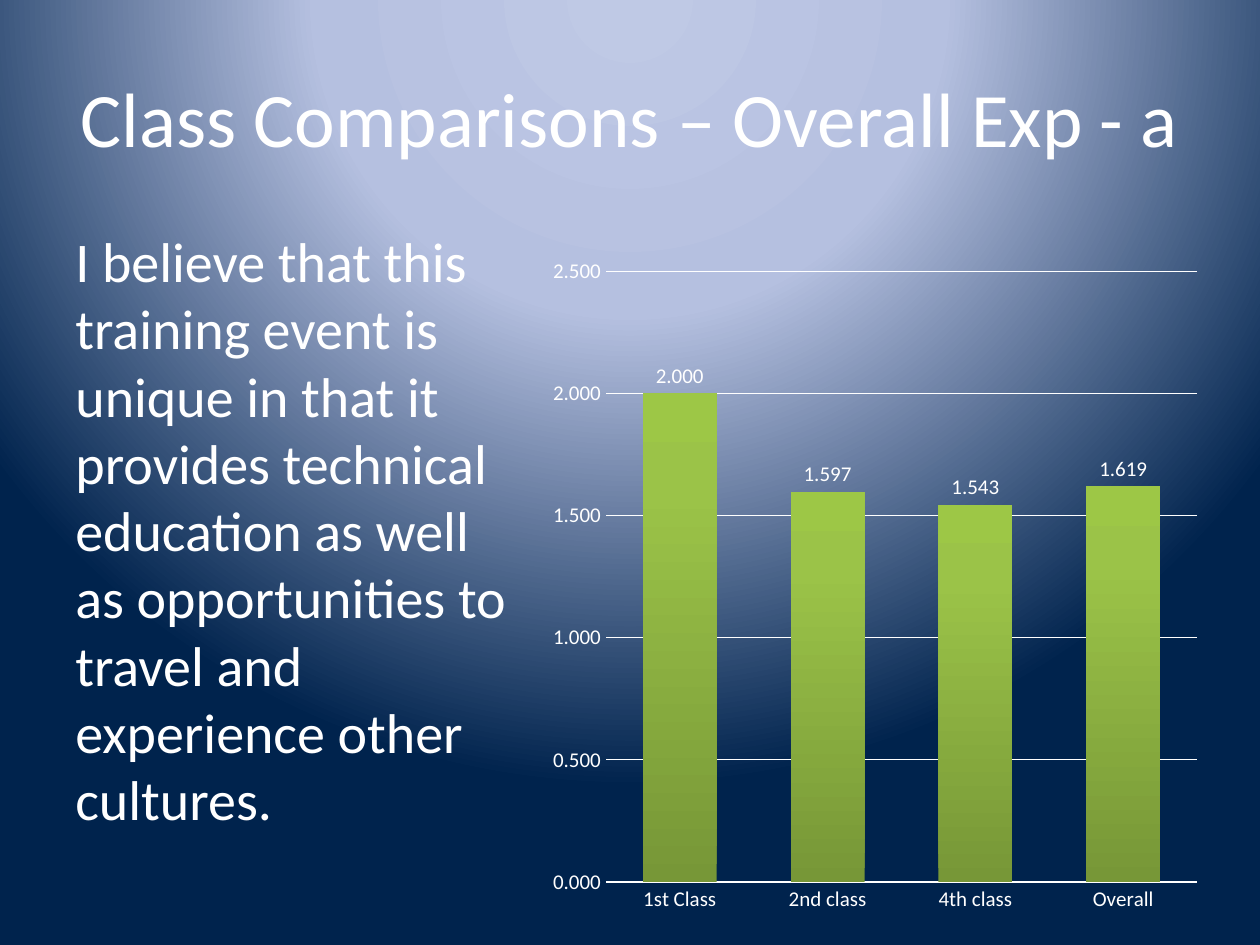
from lxml import etree
from pptx import Presentation
from pptx.chart.data import CategoryChartData
from pptx.dml.color import RGBColor
from pptx.enum import chart as charts, text
from pptx.oxml import parse_xml
from pptx.oxml.ns import nsdecls, qn
from pptx.util import Inches, Pt

FONT = "Calibri"
WHITE = "FFFFFF"
NUMBER_FORMAT = "0.000"


def color(hex_string):
    return RGBColor.from_string(hex_string)


def format_font(font, size, hex_color=WHITE):
    font.name = FONT
    font.size = Pt(size)
    font.color.rgb = color(hex_color)


def add_text(slide, content, left, top, width, height, *, size,
             align=text.PP_ALIGN.LEFT, anchor=text.MSO_ANCHOR.TOP):
    box = slide.shapes.add_textbox(
        Inches(left), Inches(top), Inches(width), Inches(height))
    frame = box.text_frame
    frame.word_wrap = True
    frame.vertical_anchor = anchor
    paragraph = frame.paragraphs[0]
    paragraph.alignment = align
    run = paragraph.add_run()
    run.text = content
    format_font(run.font, size)
    return box


def set_gradient(parent, stops, shading):
    """Replace the solid fill in parent with a gradient of (percent, color) stops."""
    stop_xml = "".join(
        f'<a:gs pos="{percent * 1000}"><a:srgbClr val="{hex_color}"/></a:gs>'
        for percent, hex_color in stops)
    gradient = parse_xml(
        f'<a:gradFill {nsdecls("a")} rotWithShape="1">'
        f'<a:gsLst>{stop_xml}</a:gsLst>{shading}</a:gradFill>')
    parent.replace(parent.find(qn("a:solidFill")), gradient)


def set_background(slide):
    slide.background.fill.solid()
    properties = slide._element.find(".//" + qn("p:bgPr"))
    set_gradient(
        properties, [(0, "BFC9E5"), (40, "B5C0E0"), (100, "00234D")],
        '<a:path path="circle">'
        '<a:fillToRect l="50000" t="-80000" r="50000" b="180000"/></a:path>')


def set_plot_layout(chart, **bounds):
    """Place the inner plot area by fractions of the chart's size."""
    area = chart._chartSpace.find(".//" + qn("c:plotArea"))
    for old_layout in area.findall(qn("c:layout")):
        area.remove(old_layout)
    layout = etree.Element(qn("c:layout"))
    manual = etree.SubElement(layout, qn("c:manualLayout"))
    settings = {"layoutTarget": "inner", "xMode": "edge", "yMode": "edge", **bounds}
    for name, value in settings.items():
        etree.SubElement(manual, qn(f"c:{name}")).set("val", str(value))
    area.insert(0, layout)


def format_axis(axis):
    axis.major_tick_mark = charts.XL_TICK_MARK.NONE
    axis.minor_tick_mark = charts.XL_TICK_MARK.NONE
    format_font(axis.tick_labels.font, 12)


def set_line(line, width):
    line.color.rgb = color(WHITE)
    line.width = Pt(width)


def add_column_chart(slide, categories, values, left, top, width, height):
    data = CategoryChartData(number_format=NUMBER_FORMAT)
    data.categories = categories
    data.add_series("Series 1", values)
    chart = slide.shapes.add_chart(
        charts.XL_CHART_TYPE.COLUMN_CLUSTERED,
        Inches(left), Inches(top), Inches(width), Inches(height), data).chart
    chart.has_legend = False
    chart.has_title = False
    format_font(chart.font, 10)
    set_plot_layout(chart, x=0.103, y=0.059, w=0.866, h=0.881)

    # Axes
    format_axis(chart.category_axis)
    set_line(chart.category_axis.format.line, 1)
    value_axis = chart.value_axis
    format_axis(value_axis)
    value_axis.minimum_scale = 0
    value_axis.maximum_scale = 2.5
    value_axis.major_unit = 0.5
    value_axis.format.line.fill.background()
    value_axis.has_major_gridlines = True
    set_line(value_axis.major_gridlines.format.line, 0.75)
    value_axis.tick_labels.number_format = NUMBER_FORMAT
    value_axis.tick_labels.number_format_is_linked = False

    # Columns
    plot = chart.plots[0]
    plot.vary_by_categories = False
    plot.gap_width = 100
    plot.overlap = -24
    series = plot.series[0]
    series.invert_if_negative = False
    series.format.fill.solid()
    set_gradient(
        series._element.find(qn("c:spPr")),
        [(0, "779737"), (80, "9BC348"), (100, "9DC746")],
        f'<a:lin ang="{270 * 60000}" scaled="0"/>')

    # Value labels
    labels = series.data_labels
    labels.show_value = True
    labels.position = charts.XL_LABEL_POSITION.OUTSIDE_END
    labels.number_format = NUMBER_FORMAT
    labels.number_format_is_linked = False
    format_font(labels.font, 12)


def main():
    presentation = Presentation()
    presentation.slide_width = Inches(10)
    presentation.slide_height = Inches(7.5)
    slide = presentation.slides.add_slide(presentation.slide_layouts[6])
    set_background(slide)

    # Title and statement
    add_text(slide, "Class Comparisons – Overall Exp - a", 0.5, 0.3, 9, 1.25,
             size=44, align=text.PP_ALIGN.CENTER, anchor=text.MSO_ANCHOR.MIDDLE)
    add_text(slide,
             "I believe that this training event is unique in that it provides "
             "technical education as well as opportunities to travel and "
             "experience other cultures.",
             0.5, 1.75, 3.67, 4.95, size=32)

    # Class averages
    add_column_chart(slide, ["1st Class", "2nd class", "4th class", "Overall"],
                     [2, 1.597, 1.543, 1.619], 4.25, 1.83, 5.42, 5.5)

    presentation.save("out.pptx")


if __name__ == "__main__":
    main()
